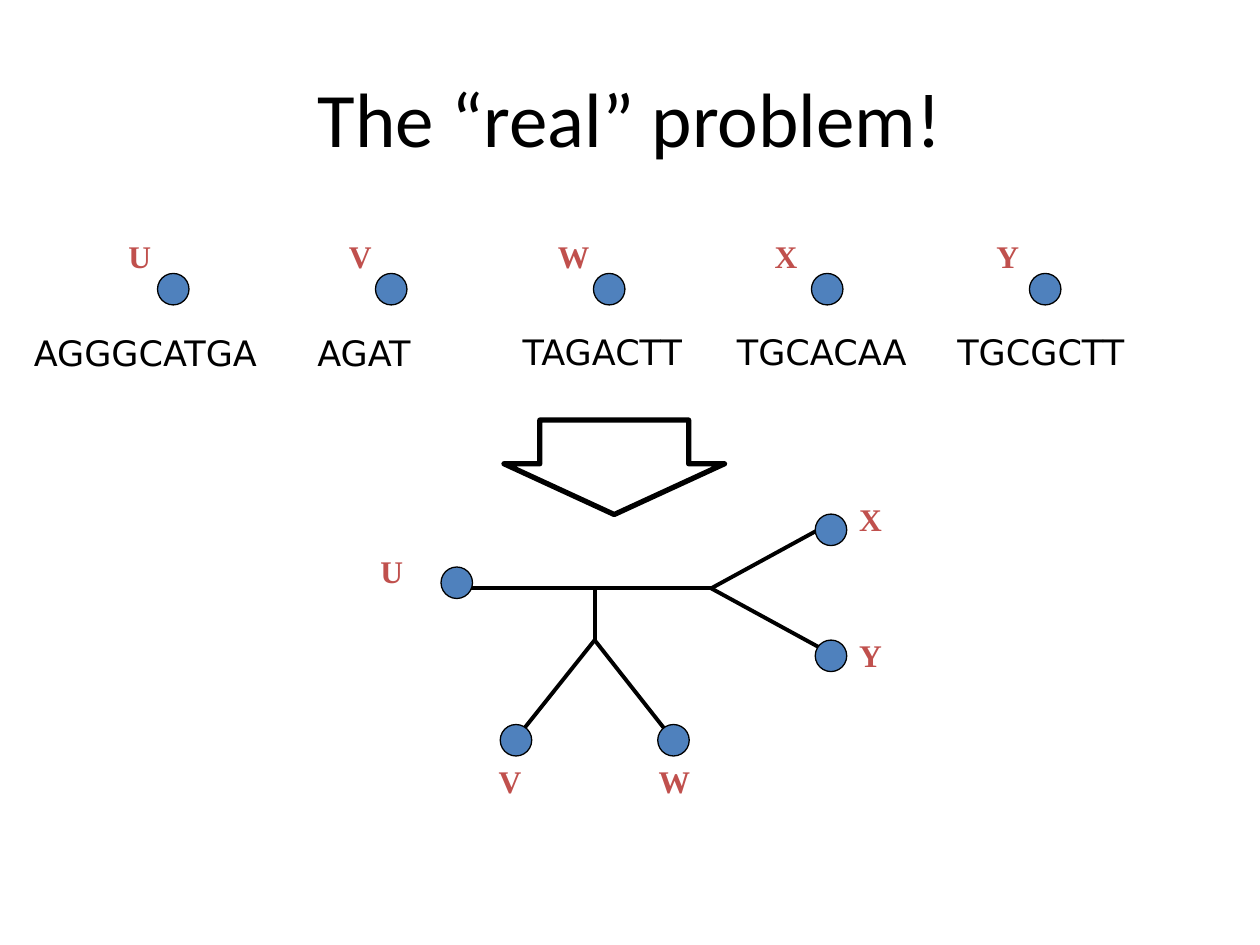
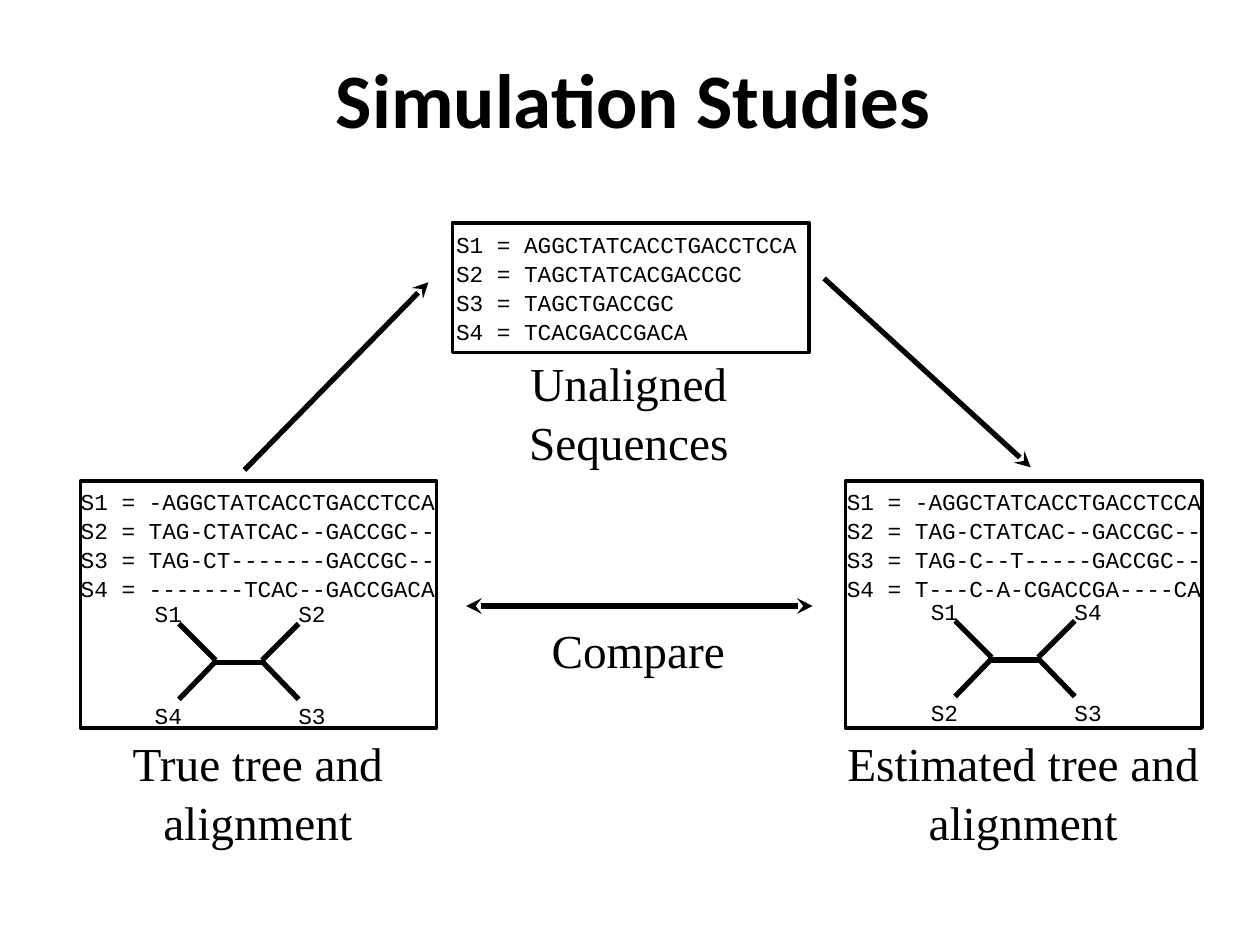
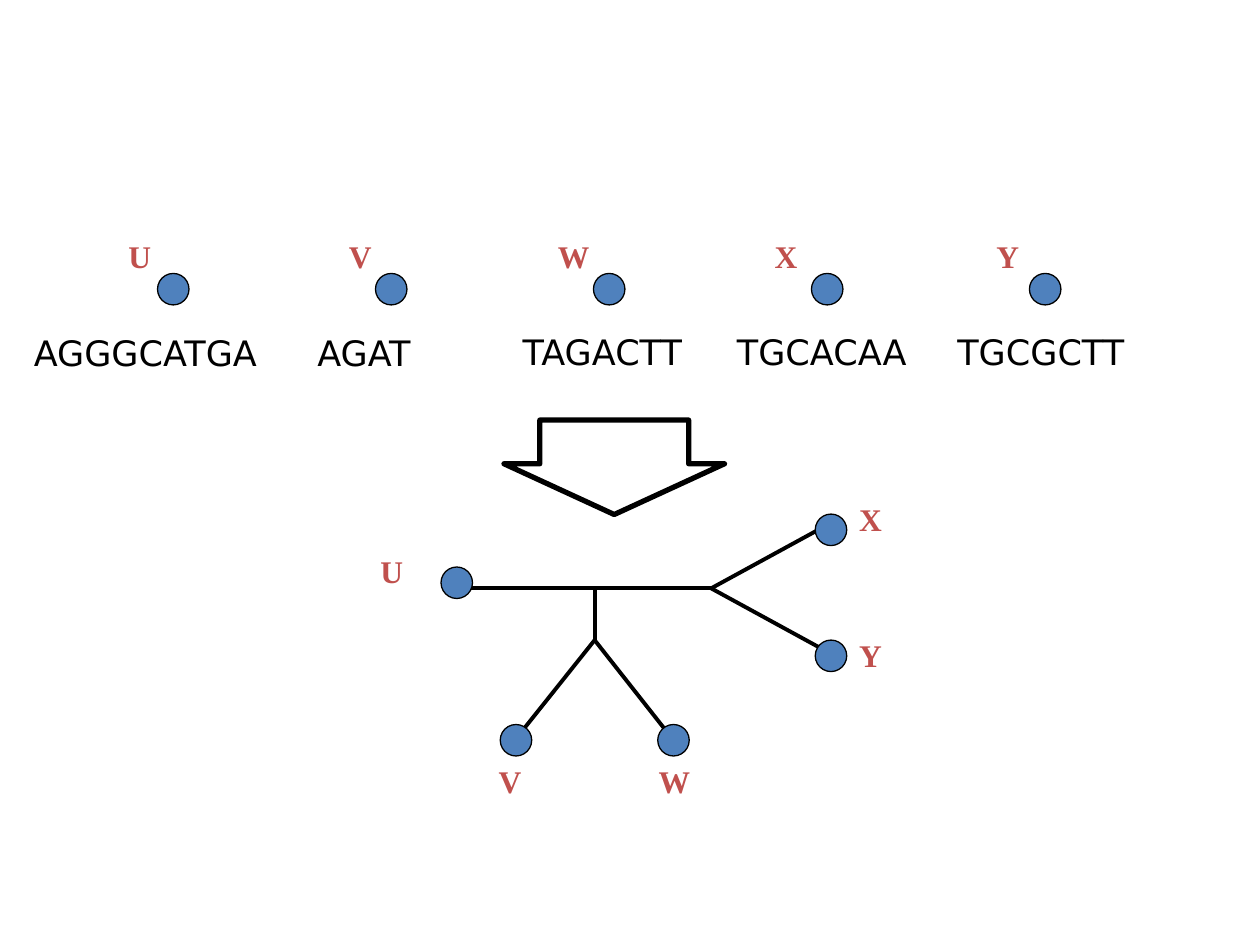
from pptx import Presentation
from pptx.dml.color import RGBColor
from pptx.enum.shapes import MSO_CONNECTOR, MSO_SHAPE
from pptx.enum.text import MSO_ANCHOR, PP_ALIGN
from pptx.oxml.ns import qn
from pptx.util import Pt
from lxml.etree import SubElement

BLACK = RGBColor(0x00, 0x00, 0x00)
BLUE = RGBColor(0x4F, 0x81, 0xBD)
RED = RGBColor(0xC0, 0x50, 0x4D)

# Text styles: font values, then paragraph values
TITLE = dict(name="Calibri", size=Pt(44)), dict(alignment=PP_ALIGN.CENTER)
TITLE_BOLD = dict(TITLE[0], bold=True), TITLE[1]
SEQUENCE = dict(name="DejaVu Sans", size=Pt(20)), {}
TAXON = dict(name="Times New Roman", size=Pt(18), bold=True), {}
CAPTION = (dict(name="Times New Roman", size=Pt(27)),
           dict(alignment=PP_ALIGN.CENTER, line_spacing=1.04))
MONO_LEFT = dict(name="Courier New", size=Pt(13)), dict(line_spacing=1.06)
MONO = MONO_LEFT[0], dict(alignment=PP_ALIGN.CENTER, line_spacing=1.06)

DEFAULT_INSETS = (7.2, 3.6, 7.2, 3.6)
NO_INSETS = (0, 0, 0, 0)

# Phylogeny problem: taxon, label left, sequence, sequence box (left, top, width)
TAXA = [
    ("U", 66.24, "AGGGCATGA", (12.24, 185.76, 144)),
    ("V", 192.24, "AGAT", (174.24, 185.76, 69.84)),
    ("W", 311.76, "TAGACTT", (291.6, 185.04, 108)),
    ("X", 435.6, "TGCACAA", (414, 185.04, 111.6)),
    ("Y", 562.32, "TGCGCTT", (540, 185.04, 110.16)),
]
FIRST_DOT, DOT_PITCH, DOT_TOP, DOT_SIZE = 90, 124.56, 156.24, 18
TAXON_TOP = 131.76

# Tree leaves: taxon, dot corner, label corner
LEAVES = [
    ("U", (252, 324), (210.24, 311.76)),
    ("V", (285.84, 414), (277.92, 432)),
    ("W", (375.84, 414), (369.36, 432)),
    ("X", (465.84, 293.76), (483.84, 282.24)),
    ("Y", (465.84, 365.76), (483.84, 360)),
]
STEM, LOWER_FORK, RIGHT_FORK = (339.8, 336.2), (339.8, 365.8), (406.4, 336.2)
BRANCHES = [
    ((264.2, 336.2), RIGHT_FORK), (STEM, LOWER_FORK),
    ((291.6, 426.2), LOWER_FORK), ((387.4, 426.2), LOWER_FORK),
    ((472.3, 300.2), RIGHT_FORK), ((472.3, 372.2), RIGHT_FORK),
]

# Simulation study: frame, text box, text style, lines, caption, caption box
PANELS = [
    ((258.5, 127.4, 203.8, 74.2), (260.6, 132.5, 198, 63.4), MONO_LEFT,
     ["S1 = AGGCTATCACCTGACCTCCA", "S2 = TAGCTATCACGACCGC",
      "S3 = TAGCTGACCGC", "S4 = TCACGACCGACA"],
     "Unaligned Sequences", (261.4, 201.6, 195.8, 67)),
    ((46.1, 275, 203.4, 141.1), (44.6, 279.4, 205.2, 63.4), MONO,
     ["S1 = -AGGCTATCACCTGACCTCCA", "S2 = TAG-CTATCAC--GACCGC--",
      "S3 = TAG-CT-------GACCGC--", "S4 = -------TCAC--GACCGACA"],
     "True tree and alignment", (49, 418.3, 196.6, 67)),
    ((483.1, 275, 203.8, 141.1), (482.4, 279.4, 205.2, 63.4), MONO,
     ["S1 = -AGGCTATCACCTGACCTCCA", "S2 = TAG-CTATCAC--GACCGC--",
      "S3 = TAG-C--T-----GACCGC--", "S4 = T---C-A-CGACCGA----CA"],
     "Estimated tree and alignment", (475.2, 418.3, 218.9, 67)),
]
# Four-leaf trees: corner, labels clockwise from the top left
QUARTETS = [
    ((81.4, 339.1), ["S1", "S2", "S3", "S4"]),
    ((524.9, 337.5), ["S1", "S4", "S3", "S2"]),
]
QUARTET_LABELS = [(0, 0), (82.1, 0), (82.1, 58.2), (0, 58.2)]
QUARTET_LINES = [
    ((39.6, 39.6), (69.1, 39.6)),
    ((41.8, 38.2), (20.9, 17.3)), ((68.4, 38.2), (89.3, 17.3)),
    ((68.4, 38.9), (89.3, 60.5)), ((41.8, 38.9), (20.9, 60.5)),
]
# Arrows: start, end, arrowheads
ARROWS = [
    ((139.7, 268.6), (244.8, 161.3), ["tailEnd"]),
    ((470.9, 159.1), (589, 267.1), ["tailEnd"]),
    ((266.4, 346.3), (464.4, 346.3), ["headEnd", "tailEnd"]),
]


def pts(*values):
    return [Pt(v) for v in values]


def set_all(target, values):
    for key, value in values.items():
        setattr(target, key, value)


def add_text(s, box, lines, style, color=BLACK, insets=DEFAULT_INSETS,
             wrap=True, anchor=MSO_ANCHOR.TOP):
    tf = s.shapes.add_textbox(*pts(*box)).text_frame
    left, top, right, bottom = pts(*insets)
    set_all(tf, dict(word_wrap=wrap, vertical_anchor=anchor, margin_left=left,
                     margin_top=top, margin_right=right, margin_bottom=bottom))
    font, para = style
    for i, line in enumerate(lines):
        p = tf.add_paragraph() if i else tf.paragraphs[0]
        set_all(p, para)
        r = p.add_run()
        r.text = line
        set_all(r.font, font)
        r.font.color.rgb = color


def add_middle(s, box, lines, style, insets=NO_INSETS, wrap=True):
    add_text(s, box, lines, style, insets=insets, wrap=wrap, anchor=MSO_ANCHOR.MIDDLE)


def add_outline(s, kind, box, width, fill=None):
    sp = s.shapes.add_shape(kind, *pts(*box))
    sp.shadow.inherit = False
    if fill is None:
        sp.fill.background()
    else:
        sp.fill.solid()
        sp.fill.fore_color.rgb = fill
    sp.line.color.rgb = BLACK
    sp.line.width = Pt(width)
    return sp


def add_line(s, start, end, width, heads=()):
    line = s.shapes.add_connector(MSO_CONNECTOR.STRAIGHT, *pts(*start, *end))
    line.line.color.rgb = BLACK
    line.line.width = Pt(width)
    ln = line.line._get_or_add_ln()
    for head in heads:
        SubElement(ln, qn(f"a:{head}"), type="stealth")
    SubElement(line._element.spPr, qn("a:effectLst"))


def add_dot(s, left, top):
    add_outline(s, MSO_SHAPE.OVAL, (left, top, DOT_SIZE, DOT_SIZE), 0.75, BLUE)


def add_taxon(s, name, left, top):
    width = 38.2 if name == "W" else 31.7
    add_text(s, (left, top, width, 36), [name], TAXON, RED, wrap=False)


def phylogeny_slide(prs, title=None):
    s = prs.slides.add_slide(prs.slide_layouts[6])
    for start, end in BRANCHES:
        add_line(s, start, end, 2.25)
    # Row of sequences
    for i, (name, label_left, sequence, seq_box) in enumerate(TAXA):
        add_text(s, (*seq_box, 31), [sequence], SEQUENCE, wrap=False)
        add_dot(s, FIRST_DOT + i * DOT_PITCH, DOT_TOP)
        add_taxon(s, name, label_left, TAXON_TOP)
    # Arrow down to the tree
    arrow = add_outline(s, MSO_SHAPE.DOWN_ARROW, (288, 240, 126, 54), 3)
    arrow.adjustments[0], arrow.adjustments[1] = 0.675, 0.537
    # Leaves of the tree
    for name, dot, label in LEAVES:
        add_dot(s, *dot)
        add_taxon(s, name, *label)
    if title:
        add_middle(s, (36, 21.6, 648, 90), [title], TITLE, DEFAULT_INSETS)


def simulation_slide(prs):
    s = prs.slides.add_slide(prs.slide_layouts[6])
    add_middle(s, (21.6, 17.3, 676.8, 77), ["Simulation Studies"], TITLE_BOLD,
               (7.2, 3.6, 2.9, 3.6))
    # Framed sequences with captions
    for frame, text_box, style, lines, caption, caption_box in PANELS:
        add_outline(s, MSO_SHAPE.RECTANGLE, frame, 2)
        add_middle(s, text_box, lines, style)
        add_middle(s, caption_box, [caption], CAPTION)
    # Trees inside the lower frames
    for (left, top), names in QUARTETS:
        for (x1, y1), (x2, y2) in QUARTET_LINES:
            add_line(s, (left + x1, top + y1), (left + x2, top + y2), 3)
        for name, (x, y) in zip(names, QUARTET_LABELS):
            add_middle(s, (left + x, top + y, 29.5, 22.3), [name], MONO)
    # Arrows between the frames
    for start, end, heads in ARROWS:
        add_line(s, start, end, 3, heads)
    add_middle(s, (313.2, 354.2, 103, 32.4), ["Compare"], CAPTION, wrap=False)


def main():
    prs = Presentation()
    prs.slide_width, prs.slide_height = pts(720, 540)
    phylogeny_slide(prs, "The “real” problem!")
    simulation_slide(prs)
    phylogeny_slide(prs)
    prs.save("out.pptx")


if __name__ == "__main__":
    main()
